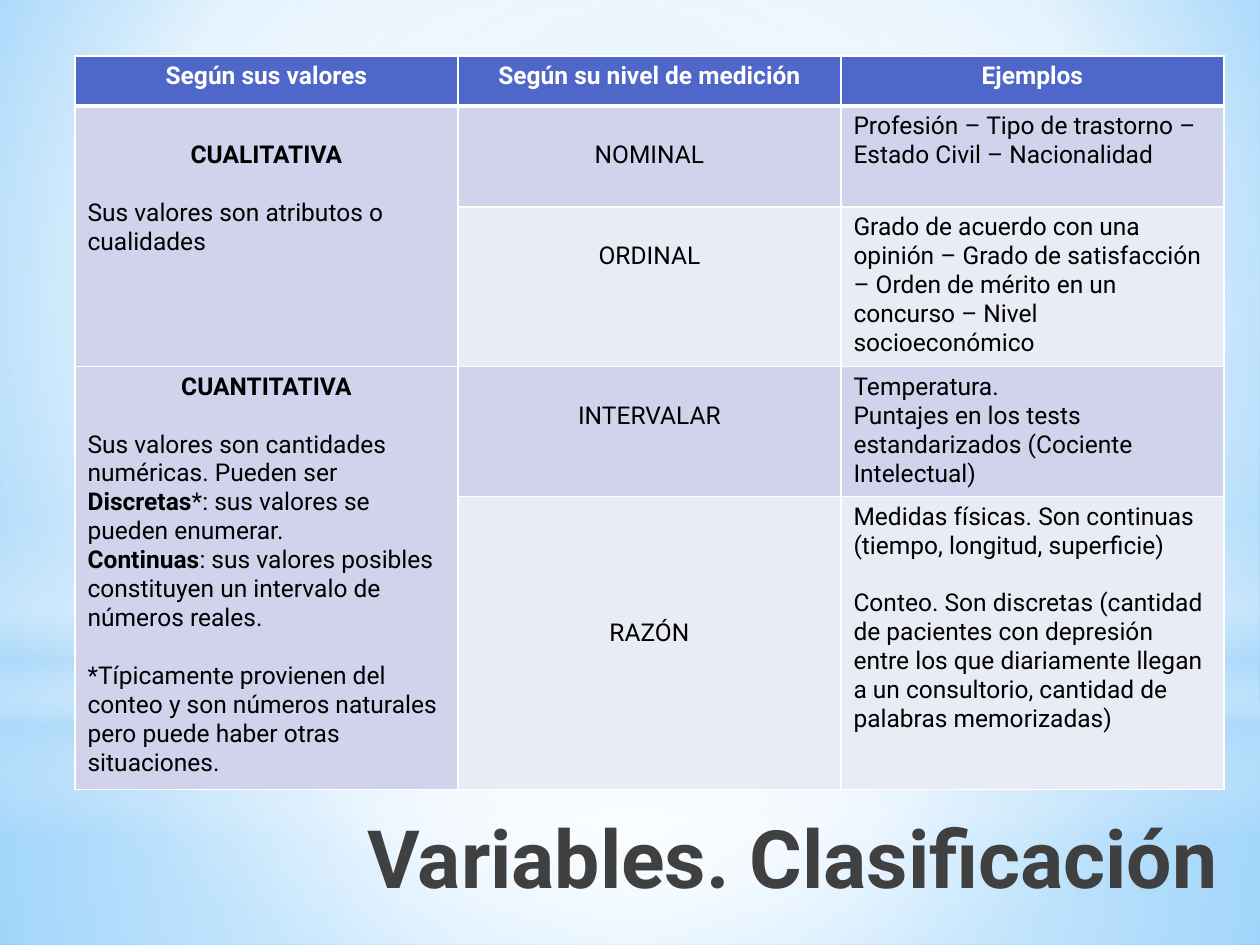
from dataclasses import dataclass
from typing import NamedTuple

from lxml import etree
from pptx import Presentation, util as u
from pptx.dml.color import RGBColor
from pptx.enum import shapes, text
from pptx.oxml import ns

PX_PER_INCH = 126


@dataclass(frozen=True)
class Theme:
    font: str = "Roboto"
    title_size: float = 46
    body_size: float = 14
    blank_line: float = 16.5
    title: str = "404040"
    ink: str = "000000"
    white: str = "FFFFFF"
    sky: str = "B4DCFA"
    header: str = "4E67C8"
    band_dark: str = "D0D3EB"
    band_light: str = "E9EBF5"


T = Theme()
LEFT, CENTER, RIGHT = text.PP_ALIGN.LEFT, text.PP_ALIGN.CENTER, text.PP_ALIGN.RIGHT


class Stop(NamedTuple):
    pos: int
    color: str
    alpha: int = 100


class Box(NamedTuple):
    x: int
    y: int
    w: int
    h: int


class Glow(NamedTuple):
    kind: shapes.MSO_SHAPE
    box: Box
    stops: list[Stop]
    focus: tuple[int, ...] | None = (50, 50, 50, 50)


class Run(NamedTuple):
    text: str
    bold: bool = False


class Para(NamedTuple):
    runs: list[Run]
    align: text.PP_ALIGN = LEFT
    gap: bool = False


class Cell(NamedTuple):
    row: int
    col: int
    fill: str
    paras: list[Para]
    lines_above: int = 0
    rows: int = 1


def px(n: int) -> int:
    return round(n * 914400 / PX_PER_INCH)


def plain(s: str, gap: bool = False) -> Para:
    return Para([Run(s)], gap=gap)


def centered(s: str, bold: bool = False) -> Para:
    return Para([Run(s, bold)], CENTER)


def sub(parent, tag: str, **attrs):
    return etree.SubElement(parent, ns.qn(f"a:{tag}"), {k: str(v) for k, v in attrs.items()})


def set_gradient(fill, holder, stops: list[Stop], focus: tuple[int, ...] | None) -> None:
    """Radial gradient around focus (l, t, r, b in percent), or vertical when None."""
    fill.gradient()
    grad = holder.find(ns.qn("a:gradFill"))
    for child in list(grad):
        grad.remove(child)
    stop_list = sub(grad, "gsLst")
    for stop in stops:
        clr = sub(sub(stop_list, "gs", pos=stop.pos * 1000), "srgbClr", val=stop.color)
        if stop.alpha < 100:
            sub(clr, "alpha", val=stop.alpha * 1000)
    if focus is None:
        sub(grad, "lin", ang=5400000, scaled=0)
    else:
        path = sub(grad, "path", path="circle")
        sub(path, "fillToRect", **{k: v * 1000 for k, v in zip("ltrb", focus)})


def add_glow(slide, glow: Glow) -> None:
    sp = slide.shapes.add_shape(glow.kind, *map(px, glow.box))
    sp.shadow.inherit = False
    sp.line.fill.background()
    set_gradient(sp.fill, sp._element.spPr, glow.stops, glow.focus)


def write(tf, paras: list[Para], size: float, color: str) -> None:
    tf.word_wrap = True
    for i, para in enumerate(paras):
        p = tf.paragraphs[0] if i == 0 else tf.add_paragraph()
        p.alignment = para.align
        if para.gap:
            p.space_before = u.Pt(T.blank_line)
        for run in para.runs:
            r = p.add_run()
            r.text = run.text
            r.font.name, r.font.size, r.font.bold = T.font, u.Pt(size), run.bold
            r.font.color.rgb = RGBColor.from_string(color)


def set_borders(cell, row: int) -> None:
    """White grid, heavier on the edge between header and body."""
    heavy = {0: "B", 1: "T"}.get(row)
    tcPr = cell._tc.get_or_add_tcPr()
    for side in "LRTB":
        ln = sub(tcPr, f"ln{side}", w=u.Pt(3 if side == heavy else 1))
        sub(sub(ln, "solidFill"), "srgbClr", val=T.white)


def add_grid(slide, x: int, y: int, widths: list[int], heights: list[int], cells: list[Cell]) -> None:
    frame = slide.shapes.add_table(len(heights), len(widths), px(x), px(y),
                                   px(sum(widths)), px(sum(heights)))
    table = frame.table
    for col, w in zip(table.columns, widths):
        col.width = px(w)
    for row, h in zip(table.rows, heights):
        row.height = px(h)
    for i in range(len(heights)):
        for j in range(len(widths)):
            set_borders(table.cell(i, j), i)
    for spec in cells:
        cell = table.cell(spec.row, spec.col)
        if spec.rows > 1:
            cell.merge(table.cell(spec.row + spec.rows - 1, spec.col))
        for i in range(spec.row, spec.row + spec.rows):
            fill = table.cell(i, spec.col).fill
            fill.solid()
            fill.fore_color.rgb = RGBColor.from_string(spec.fill)
        cell.margin_top = px(6 + 29 * spec.lines_above)
        write(cell.text_frame, spec.paras, T.body_size, T.white if spec.row == 0 else T.ink)


RECT, OVAL = shapes.MSO_SHAPE.RECTANGLE, shapes.MSO_SHAPE.OVAL
GLOWS = [
    Glow(RECT, Box(0, 703, 1260, 242), [Stop(0, T.white, 91), Stop(37, T.white, 76), Stop(100, T.sky, 79)]),
    Glow(RECT, Box(0, 0, 1260, 703), [Stop(0, T.white, 89), Stop(48, T.white, 62), Stop(100, T.sky, 79)]),
    Glow(RECT, Box(0, 519, 1260, 315),
         [Stop(0, T.white, 0), Stop(29, T.white, 30), Stop(45, T.sky, 40),
          Stop(55, T.white, 26), Stop(65, T.sky, 60), Stop(100, T.white, 0)], None),
    Glow(OVAL, Box(0, 221, 1260, 703), [Stop(0, T.white), Stop(56, T.white, 0)]),
]
HEADERS = ["Según sus valores", "Según su nivel de medición", "Ejemplos"]
CELLS = [Cell(0, j, T.header, [centered(s, True)]) for j, s in enumerate(HEADERS)] + [
    Cell(1, 0, T.band_dark, [
        centered("CUALITATIVA", True),
        plain("Sus valores son atributos o cualidades", gap=True)], 1, rows=2),
    Cell(1, 1, T.band_dark, [centered("NOMINAL")], 1),
    Cell(1, 2, T.band_dark, [plain("Profesión – Tipo de trastorno – Estado Civil – Nacionalidad")]),
    Cell(2, 1, T.band_light, [centered("ORDINAL")], 1),
    Cell(2, 2, T.band_light, [plain("Grado de acuerdo con una opinión – Grado de satisfacción – "
                                    "Orden de mérito en un concurso – Nivel socioeconómico")]),
    Cell(3, 0, T.band_dark, [
        centered("CUANTITATIVA", True),
        plain("Sus valores son cantidades numéricas. Pueden ser", gap=True),
        Para([Run("Discretas", True), Run("*: sus valores se pueden enumerar.")]),
        Para([Run("Continuas", True),
              Run(": sus valores posibles constituyen un intervalo de números reales.")]),
        plain("*Típicamente provienen del conteo y son números naturales "
              "pero puede haber otras situaciones.", gap=True)], rows=2),
    Cell(3, 1, T.band_dark, [centered("INTERVALAR")], 1),
    Cell(3, 2, T.band_dark, [
        plain("Temperatura."),
        plain("Puntajes en los tests estandarizados (Cociente Intelectual)")]),
    Cell(4, 1, T.band_light, [centered("RAZÓN")], 4),
    Cell(4, 2, T.band_light, [
        plain("Medidas físicas. Son continuas (tiempo, longitud, superficie)"),
        plain("Conteo. Son discretas (cantidad de pacientes con depresión entre los que diariamente "
              "llegan a un consultorio, cantidad de palabras memorizadas)", gap=True)]),
]


def main() -> None:
    prs = Presentation()
    prs.slide_width, prs.slide_height = px(1260), px(945)
    slide = prs.slides.add_slide(prs.slide_layouts[6])
    fill = slide.background.fill
    set_gradient(fill, slide._element.cSld.bg.bgPr,
                 [Stop(0, "9ED5FF"), Stop(60, T.white), Stop(100, "5BB9FF")], (20, 10, 20, 60))
    for glow in GLOWS:
        add_glow(slide, glow)
    title = slide.shapes.add_textbox(*map(px, Box(333, 798, 897, 157))).text_frame
    title.margin_top = px(10)
    write(title, [Para([Run("Variables. Clasificación", True)], RIGHT)], T.title_size, T.title)
    add_grid(slide, 75, 56, [383] * 3, [50, 101, 157, 128, 290], CELLS)
    prs.save("out.pptx")


if __name__ == "__main__":
    main()
